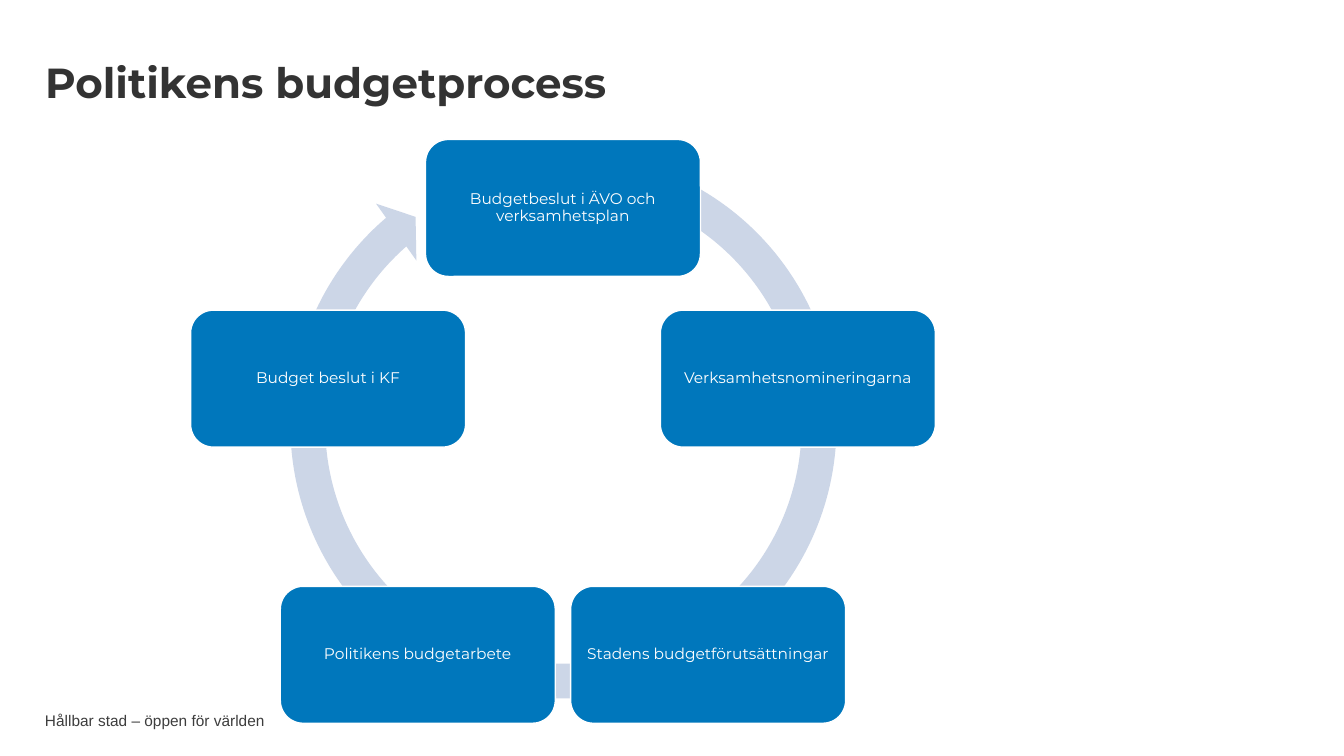
import math

import pptx
import pptx.dml.color
import pptx.enum.shapes
import pptx.enum.text
import pptx.util

# Content
TITLE = "Politikens budgetprocess"
FOOTER = "Hållbar stad – öppen för världen"
STEPS = [  # clockwise from the top
    "Budgetbeslut i ÄVO och verksamhetsplan",
    "Verksamhetsnomineringarna",
    "Stadens budgetförutsättningar",
    "Politikens budgetarbete",
    "Budget beslut i KF",
]

# Colours and fonts
BLUE = pptx.dml.color.RGBColor(0x00, 0x77, 0xBC)
PALE_BLUE = pptx.dml.color.RGBColor(0xCC, 0xD6, 0xE7)
WHITE = pptx.dml.color.RGBColor(0xFF, 0xFF, 0xFF)
TITLE_GREY = pptx.dml.color.RGBColor(0x33, 0x33, 0x33)
FOOTER_GREY = pptx.dml.color.RGBColor(0x3D, 0x3D, 0x3D)
HEADING_FONT, FOOTER_FONT = "Montserrat", "Arial"

# Geometry in px
SLIDE_SIZE = (1344, 756)
TITLE_BOX = (45, 44, 1011, 82)
FOOTER_BOX = (45, 712, 953, 16)
ARROW_BOX = (273, 135, 581, 581)
ARROW_ADJUSTMENTS = (0.06, 3.31, 137.49, 174.02, 0.06)
CYCLE_CENTRE, CYCLE_RADIUS = (563, 455), 247
STEP_SIZE = (275, 137)

ALIGN = pptx.enum.text.PP_ALIGN
SHAPE = pptx.enum.shapes.MSO_SHAPE


def px(length):
    return pptx.util.Emu(round(length * 914400 / 100.8))


def write(shape, text, font, size, colour, align, inset_x, inset_y,
          spacing=0.9, bold=False):
    frame = shape.text_frame
    frame.word_wrap = True
    frame.auto_size = pptx.enum.text.MSO_AUTO_SIZE.NONE
    frame.vertical_anchor = pptx.enum.text.MSO_ANCHOR.MIDDLE
    frame.margin_left = frame.margin_right = px(inset_x)
    frame.margin_top = frame.margin_bottom = px(inset_y)
    paragraph = frame.paragraphs[0]
    paragraph.alignment = align
    paragraph.line_spacing = spacing
    run = paragraph.add_run()
    run.text = text
    run.font.name = font
    run.font.size = pptx.util.Pt(size)
    run.font.bold = bold
    run.font.color.rgb = colour


def add_filled(kind, box, colour):
    shape = slide.shapes.add_shape(kind, *map(px, box))
    shape.shadow.inherit = False
    shape.fill.solid()
    shape.fill.fore_color.rgb = colour
    return shape


deck = pptx.Presentation()
deck.slide_width, deck.slide_height = map(px, SLIDE_SIZE)
slide = deck.slides.add_slide(deck.slide_layouts[5])
slide.background.fill.solid()
slide.background.fill.fore_color.rgb = WHITE

# Footer and title
footer = slide.shapes.add_textbox(*map(px, FOOTER_BOX))
write(footer, FOOTER, FOOTER_FONT, 11, FOOTER_GREY, ALIGN.LEFT, 0, 0, spacing=1.0)

title = slide.shapes.title
title.left, title.top, title.width, title.height = map(px, TITLE_BOX)
write(title, TITLE, HEADING_FONT, 30, TITLE_GREY, ALIGN.LEFT, 0, 5, bold=True)

# Circular arrow behind the steps
cycle_arrow = add_filled(SHAPE.CIRCULAR_ARROW, ARROW_BOX, PALE_BLUE)
cycle_arrow.line.fill.background()
for index, value in enumerate(ARROW_ADJUSTMENTS):
    cycle_arrow.adjustments[index] = value

# Steps evenly spaced around the cycle
step_width, step_height = STEP_SIZE
for index, label in enumerate(STEPS):
    angle = math.tau * index / len(STEPS)
    left = CYCLE_CENTRE[0] + CYCLE_RADIUS * math.sin(angle) - step_width / 2
    top = CYCLE_CENTRE[1] - CYCLE_RADIUS * math.cos(angle) - step_height / 2
    step = add_filled(SHAPE.ROUNDED_RECTANGLE, (left, top, *STEP_SIZE), BLUE)
    step.line.color.rgb = WHITE
    step.line.width = pptx.util.Pt(1)
    write(step, label, HEADING_FONT, 11, WHITE, ALIGN.CENTER, 5, 5)

deck.save("out.pptx")
